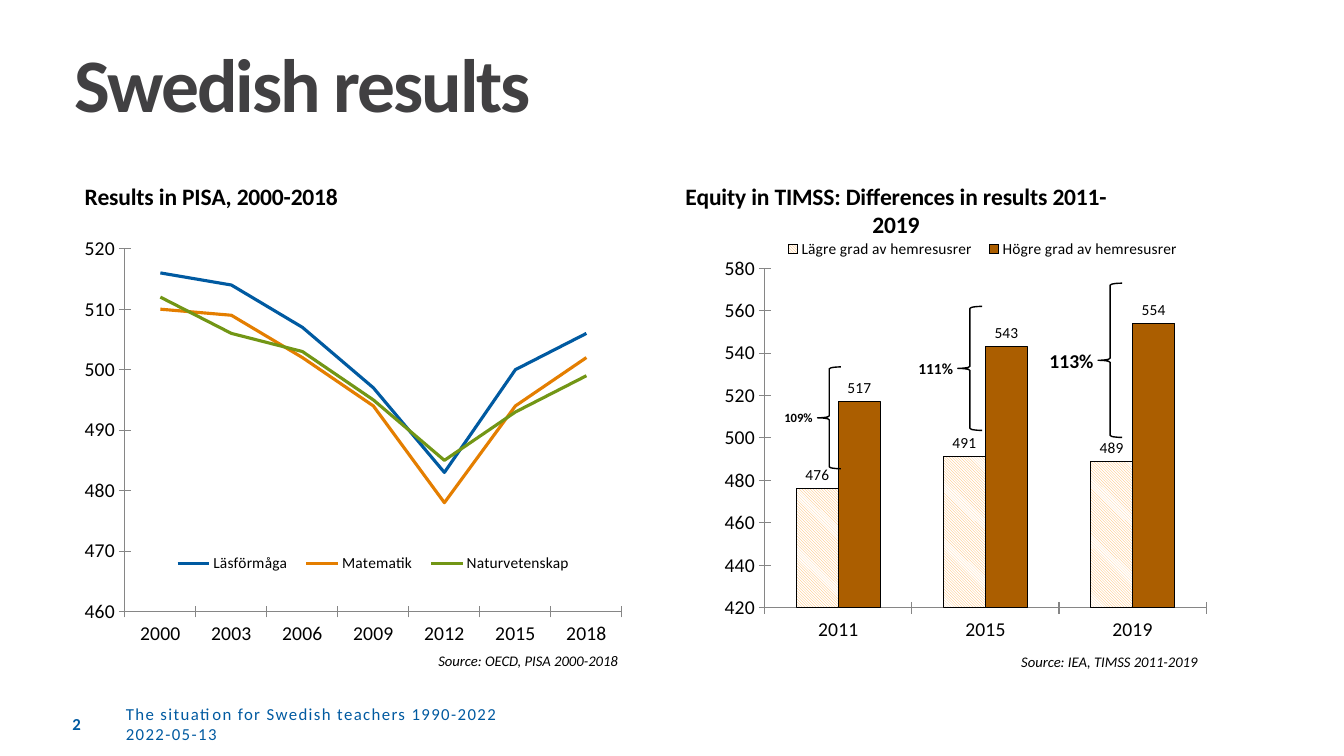
from dataclasses import dataclass

from lxml import etree
from pptx import Presentation
from pptx import util as u
from pptx.chart import data as cd
from pptx.dml import color as col
from pptx.enum import chart as ec
from pptx.enum import dml, shapes, text
from pptx.oxml import ns

PX = 9144  # EMU in one px, 100 px to the inch


# Theme: colours and type sizes
@dataclass(frozen=True)
class Theme:
    face: str = "Calibri"
    ink: str = "000000"
    head: str = "414042"
    blue: str = "005AA1"
    gold: str = "E47E00"
    green: str = "729615"
    brown: str = "AB5E00"
    sand: str = "FFB356"
    white: str = "FFFFFF"
    axis: str = "868686"
    title: float = 54
    chart: float = 16.8
    tick: float = 14
    key: float = 11
    foot: float = 12
    note: float = 10.5


T = Theme()


# Kinds of repeated element
@dataclass
class Label:
    words: str
    box: tuple
    size: float
    bold: bool = False
    slant: bool = False
    tint: str = T.ink
    space: int = 0
    anchor: text.MSO_ANCHOR = text.MSO_ANCHOR.TOP
    wrap: bool = True


@dataclass
class Graph:
    kind: ec.XL_CHART_TYPE
    title: str
    box: tuple
    years: list
    series: dict
    scale: tuple  # low, high, step
    spots: dict  # part: x, y, and width and height where set


def rgb(code: str) -> col.RGBColor:
    return col.RGBColor.from_string(code)


def span(box: tuple) -> list:
    return [u.Emu(n * PX) for n in box]


def put(thing, **form) -> None:
    for name, value in form.items():
        setattr(thing, name, value)


def style(font, size: float, tint: str = T.ink, **form) -> None:
    put(font, name=T.face, size=u.Pt(size), **form)
    font.color.rgb = rgb(tint)


def stroke(line, tint: str, width: float) -> None:
    line.color.rgb = rgb(tint)
    line.width = u.Pt(width)


def write(slide, item: Label) -> None:
    box = slide.shapes.add_textbox(*span(item.box))
    frame = box.text_frame
    put(frame, word_wrap=item.wrap, vertical_anchor=item.anchor, text=item.words)
    for run in frame.paragraphs[0].runs:
        style(run.font, item.size, item.tint, bold=item.bold, italic=item.slant)
        if item.space:
            run.font._element.set("spc", str(item.space))


def place(chart, part: str, spot: tuple) -> None:
    """Fix a chart part at fractions of the chart's size."""
    host = chart.element.xpath(f"c:chart/c:{part}")[0]
    for old in host.findall(ns.qn("c:layout")):
        host.remove(old)
    lay = etree.Element(ns.qn("c:layout"))
    form = etree.SubElement(lay, ns.qn("c:manualLayout"))
    pairs = [("xMode", "edge"), ("yMode", "edge"), *zip("xywh", spot)]
    if part == "plotArea":
        pairs.insert(0, ("layoutTarget", "inner"))
    for name, value in pairs:
        etree.SubElement(form, ns.qn(f"c:{name}")).set("val", str(value))
    host.insert(0 if part == "plotArea" else 1, lay)


def draw(slide, item: Graph):
    data = cd.CategoryChartData()
    data.categories = item.years
    for name, values in item.series.items():
        data.add_series(name, values)
    chart = slide.shapes.add_chart(item.kind, *span(item.box), data).chart
    style(chart.font, T.tick)

    # Title and legend
    chart.has_title = chart.has_legend = True
    frame = chart.chart_title.text_frame
    frame.text = item.title
    style(frame.paragraphs[0].runs[0].font, T.chart, bold=True)
    put(chart.legend, position=ec.XL_LEGEND_POSITION.RIGHT, include_in_layout=True)
    style(chart.legend.font, T.key)

    # Axes
    low, high, step = item.scale
    put(chart.value_axis, minimum_scale=low, maximum_scale=high, major_unit=step)
    for axis in (chart.category_axis, chart.value_axis):
        put(axis, has_major_gridlines=False, major_tick_mark=ec.XL_TICK_MARK.CROSS,
            minor_tick_mark=ec.XL_TICK_MARK.NONE)
        stroke(axis.format.line, T.axis, 0.75)
        style(axis.tick_labels.font, T.tick)
    chart.plots[0].vary_by_categories = False
    for part, spot in item.spots.items():
        place(chart, part, spot)
    return chart


def brace(slide, box: tuple) -> None:
    shape = slide.shapes.add_shape(shapes.MSO_SHAPE.LEFT_BRACE, *span(box))
    shape.shadow.inherit = False
    shape.fill.background()
    stroke(shape.line, T.ink, 1)


PISA = Graph(
    ec.XL_CHART_TYPE.LINE, "Results in PISA, 2000-2018", (74, 170, 554, 480),
    [str(year) for year in range(2000, 2019, 3)],
    {"Läsförmåga": (516, 514, 507, 497, 483, 500, 506),
     "Matematik": (510, 509, 502, 494, 478, 494, 502),
     "Naturvetenskap": (512, 506, 503, 495, 485, 493, 499)},
    (460, 520, 10),
    {"title": (0.01, 0.01), "legend": (0.16, 0.78, 0.75, 0.06),
     "plotArea": (0.09, 0.16, 0.89, 0.75)})

TIMSS = Graph(
    ec.XL_CHART_TYPE.COLUMN_CLUSTERED,
    "Equity in TIMSS: Differences in results 2011-2019", (670, 170, 554, 481),
    ["2011", "2015", "2019"],
    {"Lägre grad av hemresusrer": (476, 491, 489),
     "Högre grad av hemresusrer": (517, 543, 554)},
    (420, 580, 20),
    {"title": (0.01, 0.01), "legend": (0.18, 0.13, 0.74, 0.06),
     "plotArea": (0.16, 0.2, 0.79, 0.7)})

BRACES = [(811, 364, 23, 101), (950, 304, 24, 123), (1089, 281, 24, 153)]

MID = text.MSO_ANCHOR.MIDDLE
LABELS = [
    Label("The situation for Swedish teachers 1990-2022\v2022-05-13",
          (115, 698, 497, 40), T.foot, tint=T.blue, space=100, anchor=MID),
    Label("2", (62, 698, 83, 40), T.foot, bold=True, tint=T.blue, anchor=MID),
    Label("109%", (768, 402, 48, 25), 9, bold=True),
    Label("111%", (901, 351, 57, 29), 11, bold=True),
    Label("113%", (1031, 341, 76, 34), 14, bold=True),
    Label("Source: OECD, PISA 2000-2018", (425, 642, 203, 28), T.note,
          slant=True, wrap=False),
    Label("Source: IEA, TIMSS 2011-2019", (1003, 643, 199, 28), T.note,
          slant=True, wrap=False),
]


def main() -> None:
    deck = Presentation()
    put(deck, slide_width=1333 * PX, slide_height=750 * PX)
    slide = deck.slides.add_slide(deck.slide_layouts[5])

    # Title
    head = slide.shapes.title
    put(head, **dict(zip(("left", "top", "width", "height"),
                         span((74, 52, 1185, 91)))))
    frame = head.text_frame
    put(frame, text="Swedish results", vertical_anchor=text.MSO_ANCHOR.TOP,
        margin_left=0, margin_top=0, margin_right=0, margin_bottom=0)
    para = frame.paragraphs[0]
    put(para, alignment=text.PP_ALIGN.LEFT, line_spacing=u.Pt(T.title))
    font = para.runs[0].font
    style(font, T.title, T.head, bold=True)
    font._element.set("spc", "-150")

    # Line chart
    for line, tint in zip(draw(slide, PISA).plots[0].series,
                          (T.blue, T.gold, T.green)):
        put(line, smooth=False)
        line.marker.style = ec.XL_MARKER_STYLE.NONE
        stroke(line.format.line, tint, 2.25)

    # Column chart
    plot = draw(slide, TIMSS).plots[0]
    put(plot, gap_width=150, overlap=0)
    for bar in plot.series:
        stroke(bar.format.line, T.ink, 0.75)
        put(bar.data_labels, show_value=True,
            position=ec.XL_LABEL_POSITION.OUTSIDE_END)
        style(bar.data_labels.font, T.key)
    lower, upper = (bar.format.fill for bar in plot.series)
    lower.patterned()
    lower.pattern = dml.MSO_PATTERN.LIGHT_DOWNWARD_DIAGONAL
    lower.fore_color.rgb = rgb(T.sand)
    lower.back_color.rgb = rgb(T.white)
    upper.solid()
    upper.fore_color.rgb = rgb(T.brown)

    # Braces, shares, sources and footer
    for box in BRACES:
        brace(slide, box)
    for item in LABELS:
        write(slide, item)

    deck.save("out.pptx")


if __name__ == "__main__":
    main()
